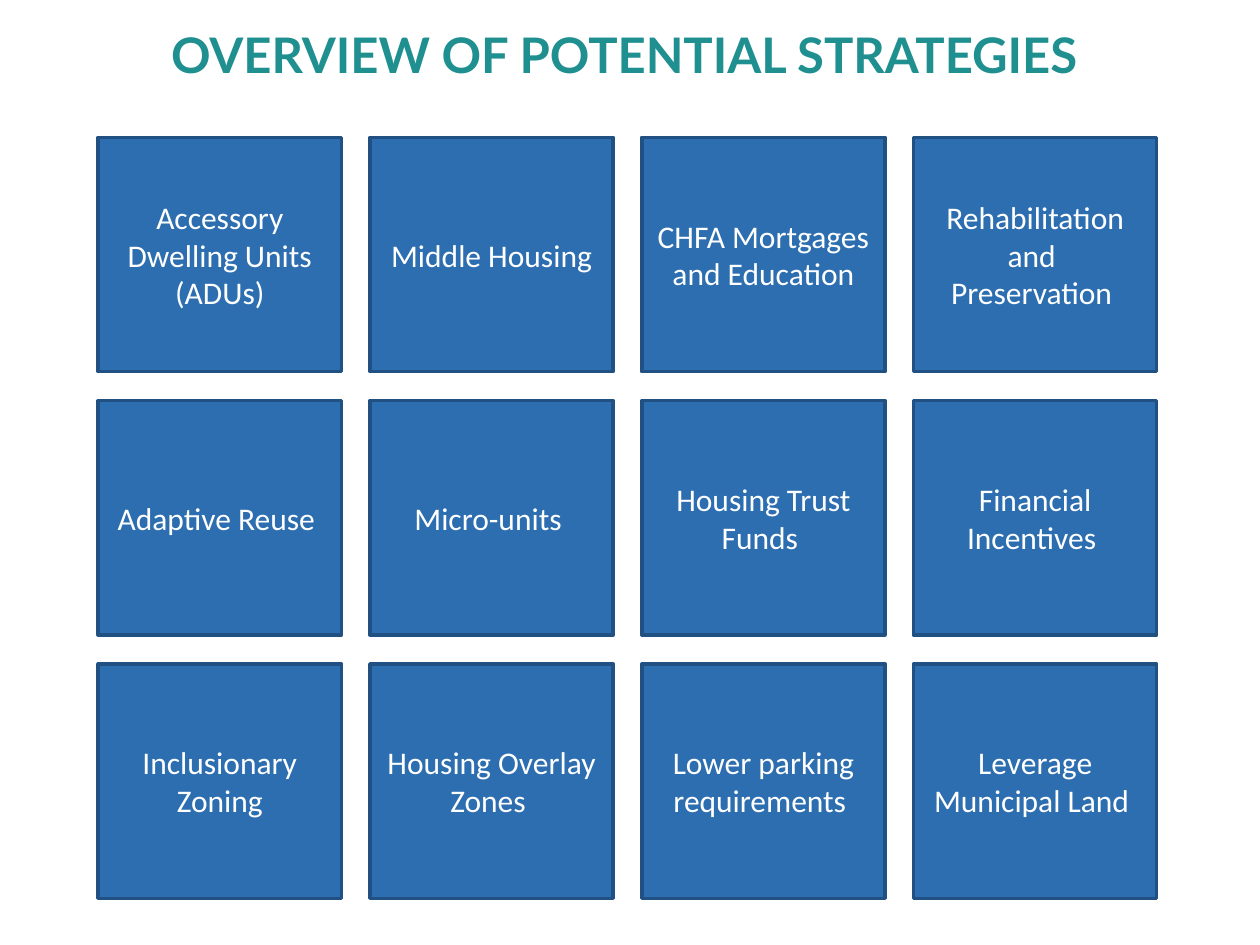
from dataclasses import dataclass
from pptx import Presentation
from pptx.dml.color import RGBColor as RGB
from pptx.enum.shapes import MSO_SHAPE as Shape
from pptx.enum.text import MSO_ANCHOR as Anchor, PP_ALIGN as Align
from pptx.util import Inches, Pt


@dataclass
class Theme:
    head: RGB = RGB(0x1F, 0x8F, 0x90)
    tile: RGB = RGB(0x2C, 0x6E, 0xB0)
    edge: RGB = RGB(0x21, 0x51, 0x82)
    text: RGB = RGB(0xFF, 0xFF, 0xFF)
    head_font: str = "Lato"
    text_font: str = "Calibri"
    head_size: int = 28
    text_size: int = 18
    edge_size: int = 2


def add_run(para, text, name, size, color, bold=False):
    run = para.add_run()
    run.text = text
    font = run.font
    font.name, font.size, font.bold = name, Pt(size), bold
    font.color.rgb = color
    para.alignment = Align.CENTER


theme = Theme()
deck = Presentation()
deck.slide_width, deck.slide_height = Inches(10), Inches(7.5)
slide = deck.slides.add_slide(deck.slide_layouts[5])

title = slide.shapes.title
title.left, title.top = 0, 0
title.width, title.height = deck.slide_width, Inches(0.92)
frame = title.text_frame
frame.word_wrap = True
frame.vertical_anchor = Anchor.MIDDLE
para = frame.paragraphs[0]
para.line_spacing = 0.9
add_run(para, "OVERVIEW OF POTENTIAL STRATEGIES ",
        theme.head_font, theme.head_size, theme.head, True)

grid = [
    [["Accessory Dwelling Units", "(ADUs)"], ["Middle Housing"],
     ["CHFA Mortgages and Education"], ["Rehabilitation and ", "Preservation "]],
    [["Adaptive Reuse "], ["Micro-units "],
     ["Housing Trust Funds "], ["Financial Incentives "]],
    [["Inclusionary Zoning"], ["Housing Overlay Zones "],
     ["Lower parking requirements "], ["Leverage Municipal Land "]],
]
left, top = 0.78, 1.09
wide, high = 1.93, 1.86
col_step, row_step = 2.157, 2.09

for row, cells in enumerate(grid):
    for col, lines in enumerate(cells):
        tile = slide.shapes.add_shape(
            Shape.RECTANGLE,
            Inches(left + col * col_step), Inches(top + row * row_step),
            Inches(wide), Inches(high))
        tile.shadow.inherit = False
        tile.fill.solid()
        tile.fill.fore_color.rgb = theme.tile
        tile.line.color.rgb = theme.edge
        tile.line.width = Pt(theme.edge_size)
        frame = tile.text_frame
        frame.word_wrap = True
        frame.vertical_anchor = Anchor.MIDDLE
        for i, line in enumerate(lines):
            para = frame.add_paragraph() if i else frame.paragraphs[0]
            add_run(para, line, theme.text_font, theme.text_size, theme.text)

deck.save("out.pptx")
